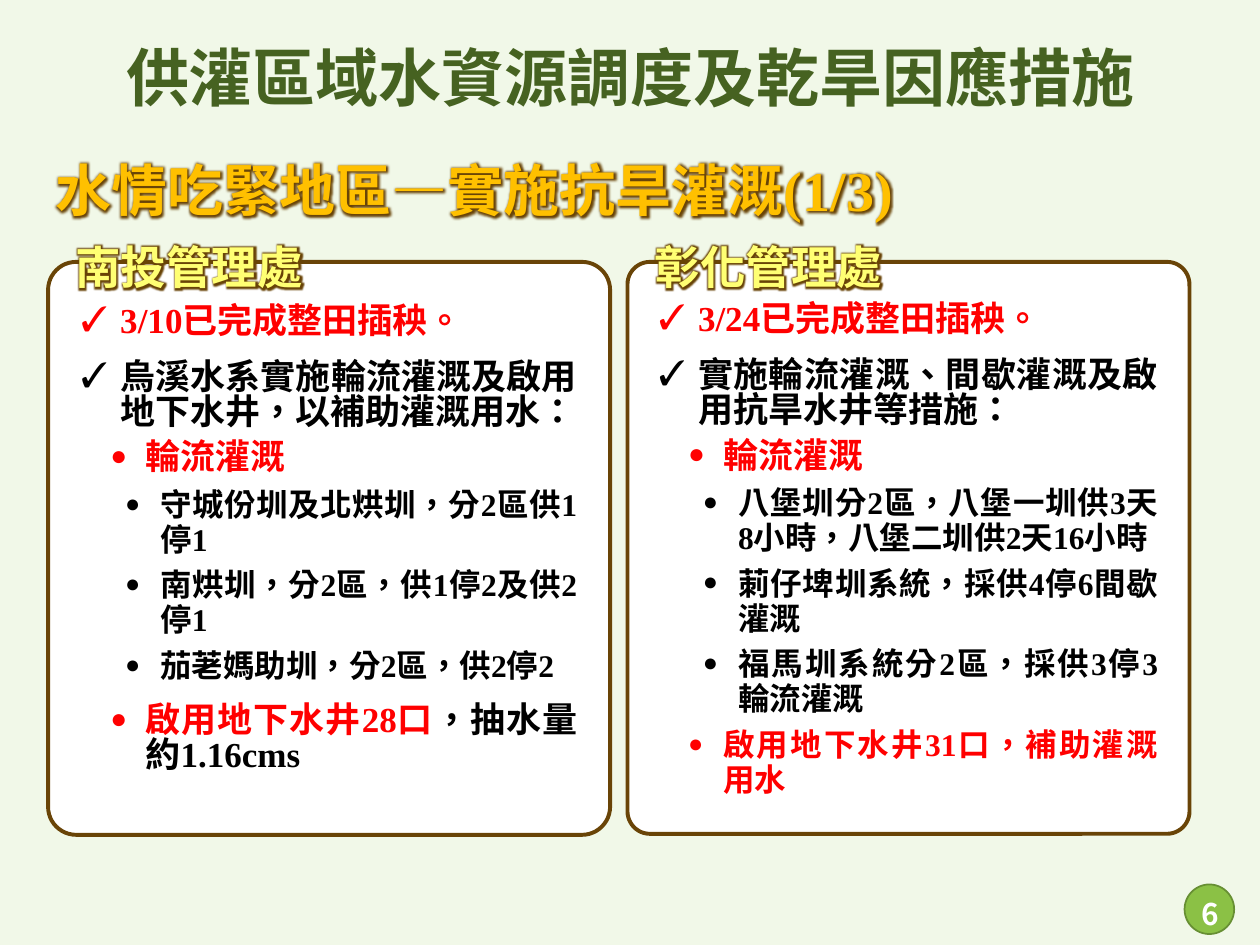
from lxml.etree import SubElement
from pptx import Presentation
from pptx.dml.color import RGBColor
from pptx.enum.lang import MSO_LANGUAGE_ID
from pptx.enum.shapes import MSO_SHAPE
from pptx.enum.text import MSO_ANCHOR, PP_ALIGN
from pptx.oxml.ns import qn
from pptx.util import Cm, Pt

RED, BLACK, WHITE = "FF0000", "000000", "FFFFFF"
BROWN, GOLD, YELLOW, GREEN = "694407", "FFC000", "FFFF73", "466221"
SERIF, SANS = "Times New Roman", "Noto Sans CJK TC"

# Per list level: bullet, bullet size in percent, left margin and hanging indent in cm
LEVELS = [("✓", 100, 0.79, 0.79), ("●", 80, 1.3, 0.71), ("●", 80, 1.6, 0.71)]


def color(value):
    return RGBColor.from_string(value)


class SlideBuilder:
    def __init__(self, slide):
        self.slide = slide

    def background(self, fill):
        self.slide.background.fill.solid()
        self.slide.background.fill.fore_color.rgb = color(fill)

    def run(self, paragraph, text, size, fill, latin=SERIF, glow=None):
        run = paragraph.add_run()
        run.text = text
        font = run.font
        font.size, font.bold = Pt(size), True
        font.color.rgb = color(fill)
        font.language_id = MSO_LANGUAGE_ID.TRADITIONAL_CHINESE
        properties = run._r.get_or_add_rPr()
        if glow:
            effects = SubElement(properties, qn("a:effectLst"))
            halo = SubElement(effects, qn("a:glow"), rad=str(Pt(5)))
            SubElement(halo, qn("a:srgbClr"), val=glow)
        font.name = latin
        SubElement(properties, qn("a:ea"), typeface=SANS)

    def title(self, text, left, top, width, height):
        shape = self.slide.shapes.title
        shape.left, shape.top, shape.width, shape.height = map(Cm, (left, top, width, height))
        shape.text_frame.vertical_anchor = MSO_ANCHOR.MIDDLE
        paragraph = shape.text_frame.paragraphs[0]
        paragraph.alignment = PP_ALIGN.CENTER
        paragraph.line_spacing = 0.9
        self.run(paragraph, text, 36, GREEN, SANS)

    def text(self, left, top, width, height, anchor=MSO_ANCHOR.TOP):
        frame = self.slide.shapes.add_textbox(*map(Cm, (left, top, width, height))).text_frame
        frame.word_wrap = True
        frame.vertical_anchor = anchor
        return frame.paragraphs[0]

    def heading(self, text, left, top, width, height, size, fill):
        paragraph = self.text(left, top, width, height)
        paragraph.line_spacing = 1.5
        self.run(paragraph, text, size, fill, glow=BROWN)

    def shape(self, kind, left, top, width, height, fill, line, weight):
        shape = self.slide.shapes.add_shape(kind, *map(Cm, (left, top, width, height)))
        shape.shadow.inherit = False
        shape.fill.solid()
        shape.fill.fore_color.rgb = color(fill)
        shape.line.color.rgb = color(line)
        shape.line.width = Pt(weight)
        return shape

    def panel(self, left, top, width, height, corner, items):
        shape = self.shape(MSO_SHAPE.ROUNDED_RECTANGLE, left, top, width, height,
                           WHITE, BROWN, 2.25)
        shape.adjustments[0] = corner
        frame = shape.text_frame
        frame.word_wrap = True
        frame.vertical_anchor = MSO_ANCHOR.TOP
        frame.margin_left = frame.margin_right = Cm(0.5)
        frame.margin_top, frame.margin_bottom = Cm(0.71), Cm(0.2)
        for index, item in enumerate(items):
            paragraph = frame.add_paragraph() if index else frame.paragraphs[0]
            self.list_item(paragraph, *item, after=0 if index else 6)

    def list_item(self, paragraph, level, size, before, runs, after):
        bullet, percent, margin, hanging = LEVELS[level]
        paragraph.level = level
        paragraph.alignment = PP_ALIGN.JUSTIFY
        paragraph.line_spacing = Pt(20)
        paragraph.space_before, paragraph.space_after = Pt(before), Pt(after)
        properties = paragraph._p.get_or_add_pPr()
        properties.set("marL", str(Cm(margin)))
        properties.set("indent", str(-Cm(hanging)))
        SubElement(properties, qn("a:buSzPct"), val=str(percent * 1000))
        SubElement(properties, qn("a:buFont"), typeface=SERIF)
        SubElement(properties, qn("a:buChar"), char=bullet)
        for text, fill in runs:
            self.run(paragraph, text, size, fill)

    def page_number(self, number):
        self.shape(MSO_SHAPE.OVAL, 23.88, 17.83, 1, 1, "8BC145", "678F33", 1)
        paragraph = self.text(19.1, 17.91, 5.72, 1.02, MSO_ANCHOR.MIDDLE)
        paragraph.alignment = PP_ALIGN.RIGHT
        self.run(paragraph, number, 17, WHITE, "Noto Sans CJK SC")


# List items: level, text size, space before, runs
NANTOU = [
    (0, 20, 6, [("3/10已完成整田插秧。", RED)]),
    (0, 20, 6, [("烏溪水系實施輪流灌溉及啟用地下水井，以補助灌溉用水：", BLACK)]),
    (1, 20, 6, [("輪流灌溉", RED)]),
    (2, 18, 6, [("守城份圳及北烘圳，分2區供1停1", BLACK)]),
    (2, 18, 6, [("南烘圳，分2區，供1停2及供2停1", BLACK)]),
    (2, 18, 6, [("茄荖媽助圳，分2區，供2停2", BLACK)]),
    (1, 20, 12, [("啟用地下水井28口", RED), ("，抽水量約1.16cms", BLACK)]),
]
CHANGHUA = [
    (0, 20, 6, [("3/24已完成整田插秧。", RED)]),
    (0, 20, 6, [("實施輪流灌溉、間歇灌溉及啟用抗旱水井等措施：", BLACK)]),
    (1, 20, 6, [("輪流灌溉", RED)]),
    (2, 18, 6, [("八堡圳分2區，八堡一圳供3天8小時，八堡二圳供2天16小時", BLACK)]),
    (2, 18, 6, [("莿仔埤圳系統，採供4停6間歇灌溉", BLACK)]),
    (2, 18, 6, [("福馬圳系統分2區，採供3停3輪流灌溉", BLACK)]),
    (1, 18, 6, [("啟用地下水井31口，補助灌溉用水", RED)]),
]


def main():
    presentation = Presentation()
    presentation.slide_width, presentation.slide_height = Cm(25.4), Cm(19.05)
    title_only = presentation.slide_layouts[5]
    builder = SlideBuilder(presentation.slides.add_slide(title_only))

    # Background, title and subtitle
    builder.background("F1F8E8")
    builder.title("供灌區域水資源調度及乾旱因應措施", 1.75, 0.74, 21.9, 1.8)
    builder.heading("水情吃緊地區—實施抗旱灌溉(1/3)", 0.86, 2.34, 18.01, 2.31, 32, GOLD)

    # One panel per management office, its heading over the top edge
    builder.panel(0.97, 5.28, 11.33, 11.55, 0.05, NANTOU)
    builder.heading("南投管理處", 1.27, 4.14, 12.09, 1.93, 26, YELLOW)
    builder.panel(12.65, 5.28, 11.33, 11.53, 0.04, CHANGHUA)
    builder.heading("彰化管理處", 12.95, 4.14, 8.74, 1.93, 26, YELLOW)

    builder.page_number("6")
    presentation.save("out.pptx")


if __name__ == "__main__":
    main()
